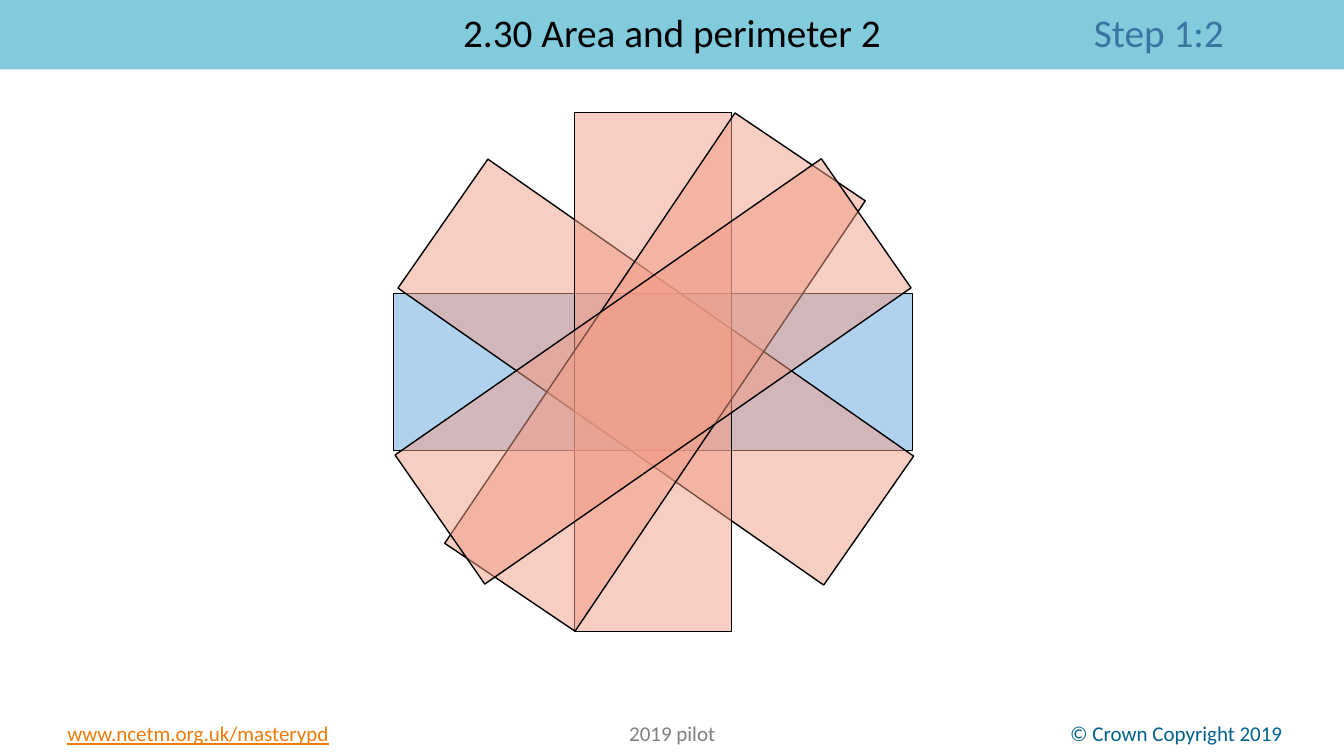
"""Build the area and perimeter slide with its fan of rotated rectangles."""
from lxml import etree
from pptx import Presentation
from pptx.dml.color import RGBColor
from pptx.enum import shapes, text
from pptx.oxml import ns
from pptx.util import Pt

BLACK = RGBColor(0x00, 0x00, 0x00)
BANNER_BLUE = RGBColor(0x82, 0xCB, 0xDD)
STEP_BLUE = RGBColor(0x38, 0x75, 0xA1)
PALE_BLUE = RGBColor(0xB1, 0xD2, 0xEF)
SALMON = RGBColor(0xF2, 0x9D, 0x86)
LINK_ORANGE = RGBColor(0xEE, 0x7B, 0x08)
GREY = RGBColor(0x80, 0x80, 0x80)
TEAL = RGBColor(0x00, 0x62, 0x8C)
FONT = "Calibri"
LEFT, CENTER, RIGHT = text.PP_ALIGN.LEFT, text.PP_ALIGN.CENTER, text.PP_ALIGN.RIGHT


def place(shape, left, top, width, height):
    """Move and size a shape, in points."""
    shape.left, shape.top = Pt(left), Pt(top)
    shape.width, shape.height = Pt(width), Pt(height)


def add_run(paragraph, words, size, color, underline=None):
    """Append one formatted run to a paragraph."""
    run = paragraph.add_run()
    run.text = words
    run.font.name = FONT
    run.font.size = Pt(size)
    run.font.color.rgb = color
    run.font.underline = underline


def fill_heading(placeholder, words, color, alignment):
    """Format a placeholder as one line of the heading."""
    frame = placeholder.text_frame
    frame.auto_size = text.MSO_AUTO_SIZE.NONE
    frame.word_wrap = True
    frame.vertical_anchor = text.MSO_ANCHOR.MIDDLE
    frame.margin_left = frame.margin_right = Pt(14.4)
    frame.margin_top = frame.margin_bottom = Pt(3.6)
    paragraph = frame.paragraphs[0]
    properties = paragraph._p.get_or_add_pPr()
    properties.set("marL", "0")
    properties.set("indent", "0")
    etree.SubElement(properties, ns.qn("a:buNone"))
    paragraph.alignment = alignment
    paragraph.line_spacing = 0.9
    paragraph.space_before = Pt(0)
    add_run(paragraph, words, 28, color)


def build_banner(slide, left, top, width, height):
    """Fill the banner with the title and the step label."""
    title, step = slide.shapes.title, slide.placeholders[1]
    place(title, left, top, width, height)
    title.fill.solid()
    title.fill.fore_color.rgb = BANNER_BLUE
    fill_heading(title, "2.30 Area and perimeter 2", BLACK, CENTER)
    place(step, left + 136.8, top, width - 208.3, height)
    fill_heading(step, "Step 1:2", STEP_BLUE, RIGHT)


def add_rectangle(slide, left, top, width, height, angle, color, opacity):
    """Draw one outlined rectangle turned about its centre."""
    rectangle = slide.shapes.add_shape(
        shapes.MSO_SHAPE.RECTANGLE, Pt(left), Pt(top), Pt(width), Pt(height))
    rectangle.rotation = angle
    rectangle.shadow.inherit = False
    rectangle.fill.solid()
    rectangle.fill.fore_color.rgb = color
    if opacity < 100:
        color_element = rectangle._element.spPr.find(".//" + ns.qn("a:srgbClr"))
        etree.SubElement(color_element, ns.qn("a:alpha"), val=str(opacity * 1000))
    rectangle.line.color.rgb = BLACK
    rectangle.line.width = Pt(1)


def build_fan(slide, left, top, width, height):
    """Stack equal rectangles at different angles in the given box."""
    turns = [
        (90, 0, 0, PALE_BLUE, 100),
        (304.9, 2, 0, SALMON, 50),
        (0, 0, 0, SALMON, 50),
        (34, 1.4, 0, SALMON, 50),
        (55.2, 0, -0.5, SALMON, 50),
    ]
    for angle, shift_x, shift_y, color, opacity in turns:
        add_rectangle(slide, left + shift_x, top + shift_y, width, height,
                      angle, color, opacity)


def build_footer(slide, left, top, width, height):
    """Set the three footer texts along the given strip."""
    box_width = 295.2
    entries = [
        (0, "www.ncetm.org.uk/masterypd", LINK_ORANGE, LEFT, True),
        (291.6, "2019 pilot", GREY, CENTER, None),
        (width - box_width, "© Crown Copyright 2019", TEAL, RIGHT, None),
    ]
    for offset, words, color, alignment, underline in entries:
        box = slide.shapes.add_textbox(
            Pt(left + offset), Pt(top), Pt(box_width), Pt(height))
        frame = box.text_frame
        frame.word_wrap = True
        if alignment == RIGHT:
            frame.margin_right = Pt(10.6)
        paragraph = frame.paragraphs[0]
        paragraph.alignment = alignment
        add_run(paragraph, words, 15, color, underline)


def main():
    """Create and save the presentation."""
    presentation = Presentation()
    presentation.slide_width, presentation.slide_height = Pt(960), Pt(540)
    slide = presentation.slides.add_slide(presentation.slide_layouts[1])
    build_banner(slide, 0, 0, 960, 49.5)
    build_fan(slide, 410.3, 80.4, 112.3, 370.8)
    build_footer(slide, 41, 511.4, 885.6, 25.2)
    presentation.save("out.pptx")


if __name__ == "__main__":
    main()
